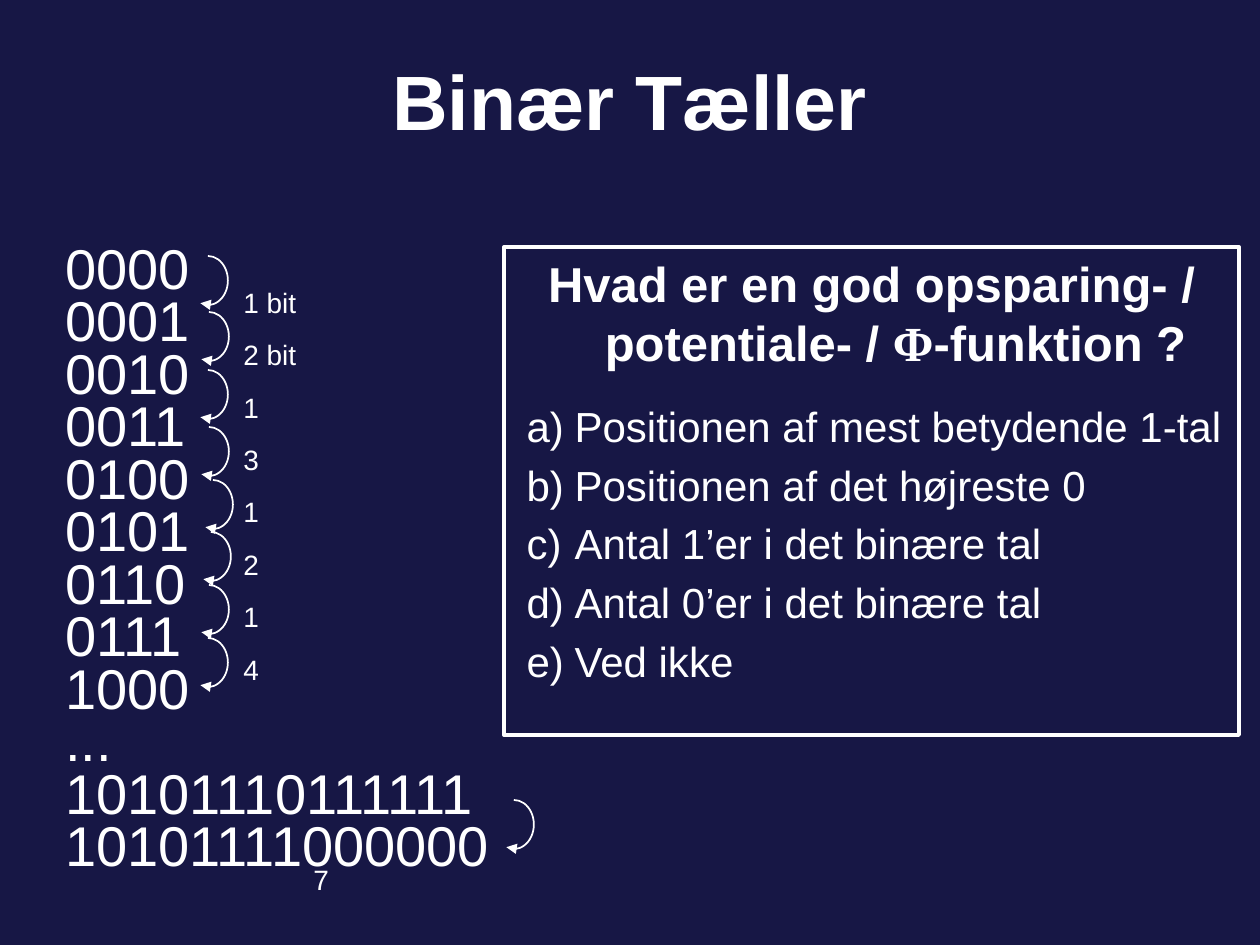
from dataclasses import dataclass

from lxml.etree import SubElement
from pptx import Presentation
from pptx.dml.color import RGBColor
from pptx.enum.shapes import MSO_SHAPE as Preset
from pptx.enum.text import MSO_ANCHOR as Anchor, MSO_AUTO_SIZE as AutoSize, PP_ALIGN as Align
from pptx.oxml.ns import qn
from pptx.util import Emu, Pt

EMU_PER_INCH = 914400
PX_PER_INCH = 126


def px(length):
    return Emu(round(length * EMU_PER_INCH / PX_PER_INCH))


@dataclass(frozen=True)
class Theme:
    background: RGBColor = RGBColor(0x17, 0x17, 0x45)
    ink: RGBColor = RGBColor(0xFF, 0xFF, 0xFF)
    face: str = "Arial"
    greek_face: str = "Times New Roman"
    title: int = 44
    number: int = 32
    question: int = 28
    answer: int = 24
    cost: int = 16
    row_pitch: int = 30
    arc_line: float = 1
    frame_line: float = 2.25
    indent: int = 48


class CounterSlide:
    """Draws the parts of the binary counter slide in one theme."""

    def __init__(self, deck, theme):
        self.theme = theme
        self.slide = deck.slides.add_slide(deck.slide_layouts[1])
        fill = self.slide.background.fill
        fill.solid()
        fill.fore_color.rgb = theme.background

    def place(self, shape, left, top, width, height):
        shape.left, shape.top = px(left), px(top)
        shape.width, shape.height = px(width), px(height)

    def style(self, paragraph, size, bold=False, face=None):
        font = paragraph.font
        font.size, font.bold = Pt(size), bold
        font.name = face or self.theme.face
        font.color.rgb = self.theme.ink

    def hang(self, paragraph):
        properties = paragraph._p.get_or_add_pPr()
        properties.set("marL", str(px(self.theme.indent)))
        properties.set("indent", str(-px(self.theme.indent)))
        return properties

    def outline(self, shape, weight):
        shape.shadow.inherit = False
        shape.fill.background()
        shape.line.color.rgb = self.theme.ink
        shape.line.width = Pt(weight)

    def title(self, text, *bounds):
        heading = self.slide.shapes.title
        self.place(heading, *bounds)
        heading.text_frame.text = text
        heading.text_frame.vertical_anchor = Anchor.MIDDLE
        self.style(heading.text_frame.paragraphs[0], self.theme.title, bold=True)

    def column(self, rows, size, *bounds):
        frame = self.slide.shapes.add_textbox(*map(px, bounds)).text_frame
        frame.word_wrap = True
        frame.text = "\n".join(rows)
        for paragraph in frame.paragraphs:
            self.hang(paragraph)
            paragraph.line_spacing = Pt(self.theme.row_pitch)
            self.style(paragraph, size)

    def step_arc(self, left, top):
        arc = self.slide.shapes.add_shape(Preset.ARC, px(left), px(top), px(40), px(49))
        arc.adjustments[0], arc.adjustments[1] = 162, 64.97
        self.outline(arc, self.theme.arc_line)
        SubElement(arc._element.spPr.find(qn("a:ln")), qn("a:tailEnd"), type="triangle")

    def question(self, pieces, *bounds):
        panel = self.slide.shapes.add_shape(Preset.RECTANGLE, *map(px, bounds))
        self.outline(panel, self.theme.frame_line)
        frame = panel.text_frame
        frame.word_wrap = True
        frame.vertical_anchor = Anchor.TOP
        paragraph = frame.paragraphs[0]
        paragraph.alignment = Align.CENTER
        self.hang(paragraph)
        self.style(paragraph, self.theme.question, bold=True)
        for text, face in pieces:
            run = paragraph.add_run()
            run.text = text
            run.font.name = face
            run.font.color.rgb = self.theme.ink

    def answers(self, options, *bounds):
        body = self.slide.placeholders[1]
        self.place(body, *bounds)
        frame = body.text_frame
        frame.auto_size = AutoSize.NONE
        frame.text = "\n".join(options)
        for paragraph in frame.paragraphs:
            SubElement(self.hang(paragraph), qn("a:buAutoNum"), type="alphaLcParenR")
            self.style(paragraph, self.theme.answer)


def main():
    deck = Presentation()
    deck.slide_width, deck.slide_height = px(1260), px(945)
    theme = Theme()
    counter = CounterSlide(deck, theme)

    counter.title("Binær Tæller", 0, 21, 1260, 158)
    numbers = [f"{value:04b}" for value in range(9)]
    numbers += ["...", "10101110111111", "10101111000000"]
    counter.column(numbers, theme.number, 53, 242, 462, 664)
    costs = ["1 bit", "2 bit", "1", "3", "1", "2", "1", "4"]
    counter.column(costs, theme.cost, 231, 260, 180, 433)
    counter.column(["7"], theme.cost, 301, 837, 60, 66)

    arc_corners = [(188, 256), (189, 312), (188, 370), (189, 427), (193, 480),
                   (191, 532), (189, 585), (188, 638), (494, 800)]
    for left, top in arc_corners:
        counter.step_arc(left, top)

    counter.question([
        ("Hvad er en god opsparing- / potentiale- / ", theme.face),
        ("Φ", theme.greek_face),
        ("-funktion ?", theme.face),
    ], 504, 247, 735, 488)
    counter.answers([
        "Positionen af mest betydende 1-tal",
        "Positionen af det højreste 0",
        "Antal 1’er i det binære tal",
        "Antal 0’er i det binære tal",
        "Ved ikke",
    ], 514, 394, 746, 315)
    deck.save("out.pptx")


if __name__ == "__main__":
    main()
